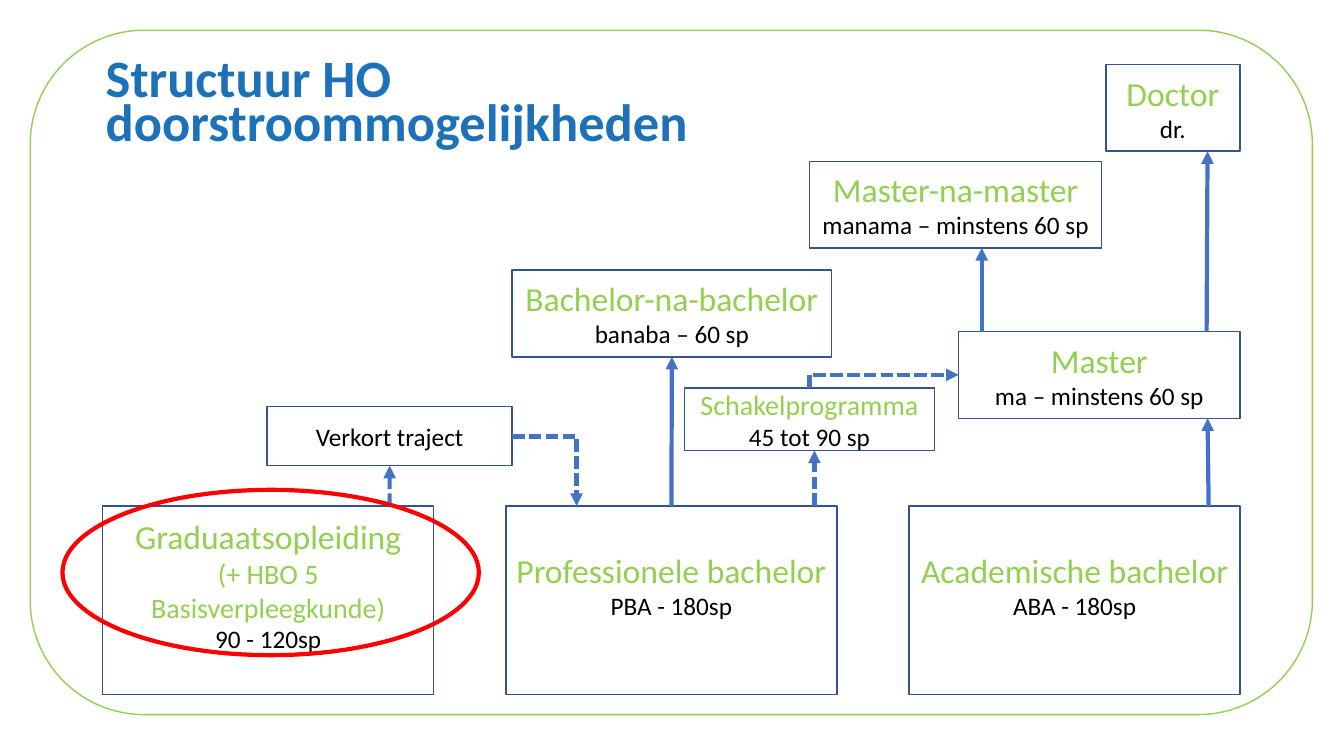
from dataclasses import dataclass
from typing import Optional

from lxml.etree import SubElement
from pptx import Presentation
from pptx.dml.color import RGBColor
from pptx.enum.dml import MSO_LINE as Dash
from pptx.enum.shapes import MSO_CONNECTOR as Link, MSO_SHAPE as Form
from pptx.enum.text import MSO_ANCHOR as Anchor, PP_ALIGN as Align
from pptx.oxml.ns import qn
from pptx.util import Emu, Inches, Pt

FONT = "Calibri"
LIME, NAVY, BLUE, BLACK, RED, TITLE = (
    "92D050", "325491", "4472C4", "000000", "FF0000", "1D71B8")
BASE, TALL, LOW = 66.93, 24.93, 11.47
BOTTOM, LEFT, STEP, WIDE = 2, 7.65, 30, 24.62

deck = Presentation()
deck.slide_width, deck.slide_height = Inches(13.333), Inches(7.5)
slide = deck.slides.add_slide(deck.slide_layouts[6])


@dataclass
class Line:
    text: str
    size: float = 18
    color: str = BLACK


@dataclass
class Box:
    name: str
    left: float
    top: float
    width: float
    height: float
    lines: list[Line]
    foot: float = 0.05


@dataclass
class Arrow:
    start: tuple[float, float]
    end: tuple[float, float]
    dashed: bool = False
    source: Optional[str] = None
    target: Optional[str] = None


def col(share: float) -> Emu:
    return Emu(round(deck.slide_width * share / 100))


def row(share: float) -> Emu:
    return Emu(round(deck.slide_height * share / 100))


def paint(color: str) -> RGBColor:
    return RGBColor.from_string(color)


def write(frame, lines: list[Line], align: Align, bold: bool = False) -> None:
    frame.word_wrap = True
    frame.text = "\n".join(line.text for line in lines)
    for para, line in zip(frame.paragraphs, lines):
        para.alignment = align
        for run in para.runs:
            font = run.font
            font.name, font.size, font.bold = FONT, Pt(line.size), bold
            font.color.rgb = paint(line.color)


def outline(form: Form, left: float, top: float, width: float, height: float,
            color: str, weight: float):
    shape = slide.shapes.add_shape(form, col(left), row(top), col(width), row(height))
    shape.shadow.inherit = False
    shape.fill.background()
    shape.line.color.rgb = paint(color)
    shape.line.width = Pt(weight)
    return shape


def draw_box(box: Box):
    shape = outline(Form.RECTANGLE, box.left, box.top, box.width, box.height, NAVY, 1)
    frame = shape.text_frame
    frame.vertical_anchor = Anchor.MIDDLE
    frame.margin_bottom = Inches(box.foot)
    write(frame, box.lines, Align.CENTER)
    return shape


def style(link, dashed: bool) -> None:
    link.line.color.rgb = paint(BLUE)
    link.line.width = Pt(3)
    if dashed:
        link.line.dash_style = Dash.SQUARE_DOT
    props = link._element.spPr
    SubElement(props.find(qn("a:ln")), qn("a:tailEnd"), type="triangle")
    SubElement(props, qn("a:effectLst"))


def draw_arrow(arrow: Arrow, shapes: dict) -> None:
    (x1, y1), (x2, y2) = arrow.start, arrow.end
    link = slide.shapes.add_connector(Link.STRAIGHT, col(x1), row(y1), col(x2), row(y2))
    if arrow.source:
        link.begin_connect(shapes[arrow.source], 0)
    if arrow.target:
        link.end_connect(shapes[arrow.target], BOTTOM)
    style(link, arrow.dashed)


def draw_bend(arrow: Arrow, rising: bool) -> None:
    (x1, y1), (x2, y2) = arrow.start, arrow.end
    left, top, right, low = col(x1), row(y1), col(x2), row(y2)
    if rising:
        mid_x, mid_y = (left + right) // 2, (top + low) // 2
        half_w, half_h = (top - low) // 2, (right - left) // 2
        left, right = Emu(mid_x - half_w), Emu(mid_x + half_w)
        top, low = Emu(mid_y - half_h), Emu(mid_y + half_h)
    link = slide.shapes.add_connector(Link.ELBOW, left, top, right, low)
    props = link._element.spPr
    props.find(qn("a:prstGeom")).set("prst", "bentConnector2")
    if rising:
        link.rotation = 90
        frame = props.find(qn("a:xfrm"))
        frame.set("flipH", "1")
        frame.set("flipV", "1")
        frame.set("rot", str(90 * 60000))
    style(link, arrow.dashed)


def head(text: str, size: float = 24) -> Line:
    return Line(text, size, LIME)


BASES = [
    ("grad", [head("Graduaatsopleiding"), head("(+ HBO 5 Basisverpleegkunde)", 20),
              Line("90 - 120sp")]),
    ("prof", [head("Professionele bachelor"), Line("PBA - 180sp")]),
    ("acad", [head("Academische bachelor"), Line("ABA - 180sp")]),
]
BOXES = [Box(name, LEFT + STEP * i, BASE, WIDE, TALL, lines, 0.35)
         for i, (name, lines) in enumerate(BASES)] + [
    Box("doctor", 82.28, 8.53, 9.98, LOW, [head("Doctor"), Line("dr.")]),
    Box("master", 71.33, 43.87, 20.93, LOW,
        [head("Master"), Line("ma – minstens 60 sp")]),
    Box("switch", 50.93, 51.33, 18.6, 8.27,
        [head("Schakelprogramma", 20), Line("45 tot 90 sp")]),
    Box("manama", 60.23, 21.33, 21.75, LOW,
        [head("Master-na-master"), Line("manama – minstens 60 sp")]),
    Box("banaba", 38.1, 35.73, 23.78, LOW,
        [head("Bachelor-na-bachelor"), Line("banaba – 60 sp")]),
    Box("short", 19.88, 53.73, 18.23, 7.87, [Line("Verkort traject")]),
]
ARROWS = [
    Arrow((89.93, BASE), (89.85, 55.33)),
    Arrow((89.78, 43.87), (89.85, 20)),
    Arrow((60.6, BASE), (60.6, 59.6), True),
    Arrow((49.95, BASE), (49.95, 47.2), source="prof", target="banaba"),
    Arrow((28.99, BASE), (28.99, 61.6), True, target="short"),
    Arrow((73.05, 43.87), (73.05, 32.8)),
]


def main() -> None:
    outline(Form.ROUNDED_RECTANGLE, 2.25, 4, 95.4, 90.53, LIME, 1)
    shapes = {box.name: draw_box(box) for box in BOXES}
    for arrow in ARROWS:
        draw_arrow(arrow, shapes)
    draw_bend(Arrow((38.1, 57.73), (42.9, BASE), True), False)
    draw_bend(Arrow((60.23, 51.33), (71.33, 49.6), True), True)
    title = slide.shapes.add_textbox(col(7.13), row(1.2), col(48.68), row(19.33))
    frame = title.text_frame
    frame.vertical_anchor = Anchor.BOTTOM
    write(frame, [Line("Structuur HO doorstroommogelijkheden", 37.5, TITLE)],
          Align.LEFT, True)
    frame.paragraphs[0].line_spacing = 0.7
    outline(Form.OVAL, 4.65, 64.8, 30.98, 21.87, RED, 3)
    deck.save("out.pptx")


if __name__ == "__main__":
    main()
